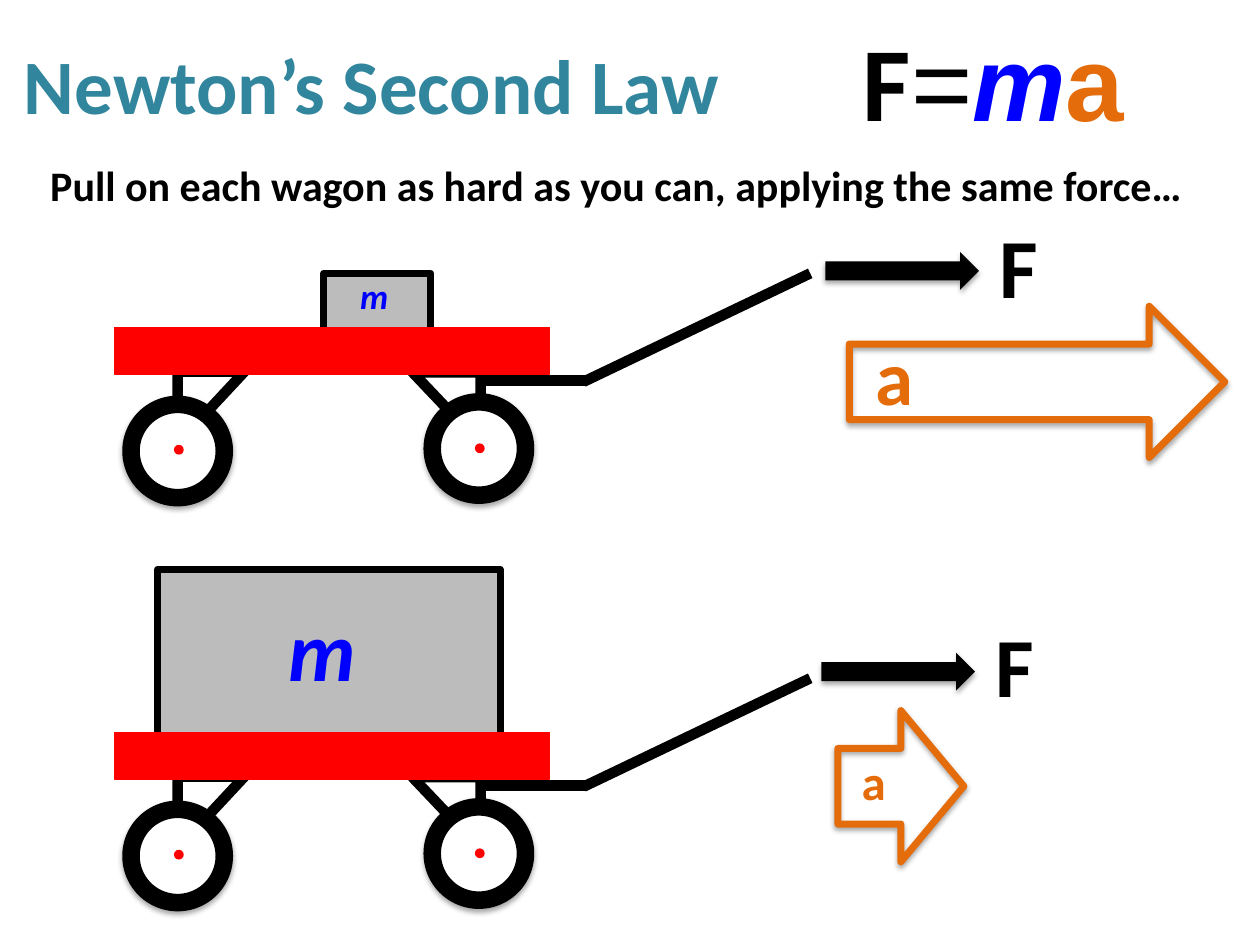
from dataclasses import dataclass

from lxml.etree import SubElement
from pptx import Presentation
from pptx.dml.color import RGBColor
from pptx.enum.shapes import MSO_CONNECTOR, MSO_SHAPE
from pptx.enum.text import MSO_ANCHOR, PP_ALIGN
from pptx.oxml.ns import qn
from pptx.util import Pt


@dataclass(frozen=True)
class Theme:
    """Colours, fonts and type sizes of the slide."""
    black: str = "000000"
    white: str = "FFFFFF"
    red: str = "FF0000"
    blue: str = "0000FF"
    teal: str = "31859C"
    orange: str = "E46C0A"
    gray: str = "949494"
    body: str = "Calibri"
    math: str = "Arial"
    law: int = 60
    big: int = 48
    head: int = 44
    mid: int = 28
    lead: int = 24
    small: int = 20


T = Theme()
RECT, OVAL = MSO_SHAPE.RECTANGLE, MSO_SHAPE.OVAL
ARROW, WEDGE = MSO_SHAPE.RIGHT_ARROW, MSO_SHAPE.RIGHT_TRIANGLE

LOADS = [(185, 156.2, 61.2, 49), (90, 325.4, 195.8, 98.6)]
DROPS = [0, 231.4]
BARS = [(333.4, 218.2, 463, 156.2), (275.8, 217.4, 334.8, 217.4)]
BRACES = [(100.1, 213.8, 41, 38.2, False), (234.7, 213.8, 41, 38.9, True)]
WHEELS = [(74.9, 231.1), (247, 229.7)]
HUBS = [(99.4, 254.2), (271.4, 253.4)]
BED = (65.5, 187.2, 248.4, 26.6)
TIRE, HUB = 53.3, 5.6

PUSHES = [(471.6, 144, 87.8, 21.6), (469.4, 373, 87.8, 21.6)]
SPEEDS = [(485.3, 175, 214.6, 86.4), (478.8, 406.1, 72, 86.4)]

LABELS = [
    ((21.6, 87.8, 699.8, 36.7), T.lead, True, [
        ("Pull on each wagon as hard as you can, applying the same force…",
         T.body, T.black, True, False)]),
    ((198.7, 153.4, 50.4, 31.7), T.small, True, [("m", T.body, T.blue, True, True)]),
    ((157.7, 337.7, 109.4, 65.5), T.big, True, [("m", T.body, T.blue, True, True)]),
    ((563.8, 118.8, 36.7, 65.5), T.big, False, [("F", T.body, T.black, True, False)]),
    ((561.6, 347, 36.7, 65.5), T.big, False, [("F", T.body, T.black, True, False)]),
    ((493.2, 184.3, 56.2, 60.5), T.head, True, [("a", T.body, T.orange, True, False)]),
    ((485.3, 426.2, 56.2, 41), T.mid, True, [("a", T.body, T.orange, True, False)]),
    ((486, 5.8, 198, 79.9), T.law, True, [
        ("F", T.body, T.black, True, False),
        ("=", T.math, T.black, False, False),
        ("m", T.math, T.blue, True, True),
        ("a", T.math, T.orange, True, False)]),
]
TITLE = ((0, 2.9, 424.8, 90), T.head, True, [
    ("Newton’s Second Law", T.body, T.teal, True, False)])


def tint(hue):
    """Turn a hex string into a colour."""
    return RGBColor.from_string(hue)


def shade(shape):
    """Give a shape a soft shadow below it."""
    glow = SubElement(shape.element.spPr.find(qn("a:effectLst")), qn("a:outerShdw"),
                      blurRad=str(Pt(3.1)), dist=str(Pt(1.8)), dir="5400000", rotWithShape="0")
    ink = SubElement(glow, qn("a:srgbClr"), val=T.black)
    SubElement(ink, qn("a:alpha"), val="35000")


def draw(home, kind, box, fill=None, edge=None, width=0, cast=False):
    """Add a preset shape with its fill, outline and shadow."""
    shape = home.add_shape(kind, *map(Pt, box))
    shape.shadow.inherit = False
    if fill:
        shape.fill.solid()
        shape.fill.fore_color.rgb = tint(fill)
    else:
        shape.fill.background()
    if edge:
        shape.line.color.rgb = tint(edge)
        shape.line.width = Pt(width)
    else:
        shape.line.fill.background()
    if cast:
        shade(shape)
    return shape


def load(home, box):
    """Add a see-through load."""
    shape = draw(home, RECT, box, T.gray, T.black, 4)
    ink = shape.element.spPr.find(qn("a:solidFill")).find(qn("a:srgbClr"))
    SubElement(ink, qn("a:alpha"), val="62000")


def bar(home, ends):
    """Add a thick black line."""
    line = home.add_connector(MSO_CONNECTOR.STRAIGHT, *map(Pt, ends))
    line.line.color.rgb = tint(T.black)
    line.line.width = Pt(6)
    SubElement(line.element.spPr, qn("a:effectLst"))


def wagon(slide, drop):
    """Add one grouped wagon, lowered by the drop."""
    home = slide.shapes.add_group_shape().shapes
    for left, top, wide, high, flip in BRACES:
        brace = draw(home, WEDGE, (left, top + drop, wide, high), None, T.black, 6)
        brace.rotation = 90
        if flip:
            brace.element.spPr.find(qn("a:xfrm")).set("flipV", "1")
    left, top, wide, high = BED
    draw(home, RECT, (left, top + drop, wide, high), T.red, T.red, 0.75)
    for left, top in WHEELS:
        draw(home, OVAL, (left, top + drop, TIRE, TIRE), T.white, T.black, 10, True)
    for left, top in HUBS:
        draw(home, OVAL, (left, top + drop, HUB, HUB), T.red)
    for left, top, right, end in BARS:
        bar(home, (left, top + drop, right, end + drop))


def label(slide, box, size, wrap, runs):
    """Add a text box run by run and return its frame."""
    frame = slide.shapes.add_textbox(*map(Pt, box)).text_frame
    frame.word_wrap = wrap
    for text, face, hue, bold, slant in runs:
        run = frame.paragraphs[0].add_run()
        run.text = text
        font = run.font
        font.name, font.size = face, Pt(size)
        font.bold, font.italic = bold, slant
        font.color.rgb = tint(hue)
    return frame


def main():
    """Build and save the slide."""
    deck = Presentation()
    deck.slide_width, deck.slide_height = Pt(720), Pt(540)
    slide = deck.slides.add_slide(deck.slide_layouts[6])
    for box in LOADS:
        load(slide.shapes, box)
    title = label(slide, *TITLE)
    title.vertical_anchor = MSO_ANCHOR.MIDDLE
    title.paragraphs[0].alignment = PP_ALIGN.CENTER
    for drop in DROPS:
        wagon(slide, drop)
    for box in SPEEDS:
        draw(slide.shapes, ARROW, box, None, T.orange, 4, True)
    for box in PUSHES:
        draw(slide.shapes, ARROW, box, T.black, cast=True)
    for item in LABELS:
        label(slide, *item)
    deck.save("out.pptx")


if __name__ == "__main__":
    main()
